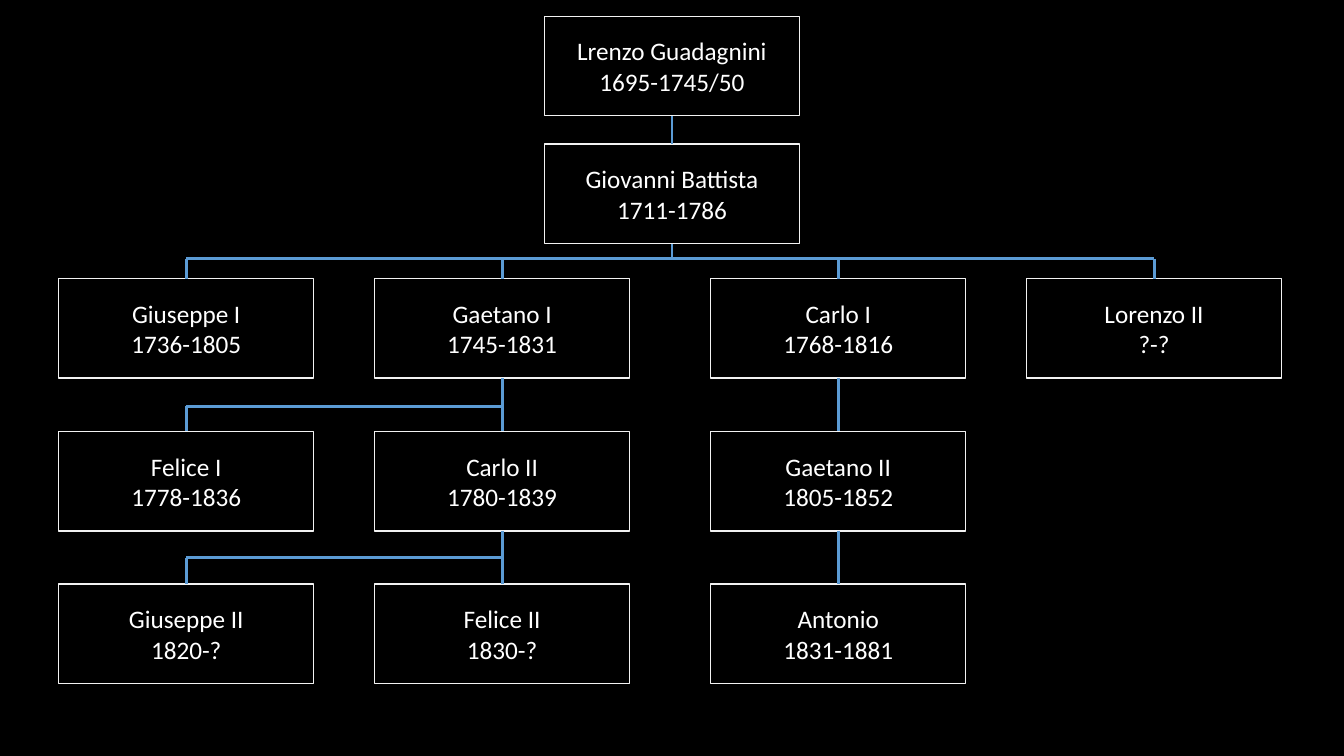
from dataclasses import dataclass

from lxml.etree import SubElement
from pptx import Presentation
from pptx.dml.color import RGBColor
from pptx.enum.shapes import MSO_CONNECTOR as Conn, MSO_SHAPE as Shape
from pptx.enum.text import MSO_ANCHOR as Anchor, PP_ALIGN as Align
from pptx.oxml.ns import qn
from pptx.util import Cm, Pt


@dataclass(frozen=True)
class Theme:
    back: RGBColor = RGBColor.from_string("000000")
    text: RGBColor = RGBColor.from_string("FFFFFF")
    border: RGBColor = RGBColor.from_string("F2F2F2")
    link: RGBColor = RGBColor.from_string("5B9BD5")
    font: str = "Calibri"
    size: Pt = Pt(18)
    border_width: Pt = Pt(1)
    link_width: Pt = Pt(2)


T = Theme()
TOP, BOTTOM = 0, 2
BOX_W, BOX_H = 6.43, 2.51
COLUMNS = {"A": 1.48, "B": 9.44, "C": 17.91, "D": 25.87, "mid": 13.72}
ROWS = [0.41, 3.63, 7.02, 10.87, 14.72]
CENTER = {column: left + BOX_W / 2 for column, left in COLUMNS.items()}

# column, generation, name, years
PEOPLE = [
    ("mid", 0, "Lrenzo Guadagnini", "1695-1745/50"),
    ("mid", 1, "Giovanni Battista", "1711-1786"),
    ("A", 2, "Giuseppe I", "1736-1805"),
    ("B", 2, "Gaetano I", "1745-1831"),
    ("C", 2, "Carlo I", "1768-1816"),
    ("D", 2, "Lorenzo II", "?-?"),
    ("A", 3, "Felice I", "1778-1836"),
    ("B", 3, "Carlo II", "1780-1839"),
    ("C", 3, "Gaetano II", "1805-1852"),
    ("A", 4, "Giuseppe II", "1820-?"),
    ("B", 4, "Felice II", "1830-?"),
    ("C", 4, "Antonio", "1831-1881"),
]
# parent and child boxes joined by one straight line
DIRECT = [(("mid", 0), ("mid", 1))]
DIRECT += [((c, g), (c, g + 1)) for c in "BC" for g in (2, 3)]
# height of the bar, its last column, its parent if not joined directly, children
BRANCHES = [
    (6.52, "D", ("mid", 1), [(c, 2) for c in "ABCD"]),
    (10.24, "B", None, [("A", 3)]),
    (14.05, "B", None, [("A", 4)]),
]

prs = Presentation()
prs.slide_width, prs.slide_height = Cm(33.87), Cm(19.05)
s = prs.slides.add_slide(prs.slide_layouts[6])
s.background.fill.solid()
s.background.fill.fore_color.rgb = T.back


def write(tf, lines, size=T.size, color=T.text, align=Align.CENTER):
    tf.word_wrap = True
    tf.vertical_anchor = Anchor.MIDDLE
    for i, text in enumerate(lines):
        p = tf.add_paragraph() if i else tf.paragraphs[0]
        p.alignment = align
        r = p.add_run()
        r.text = text
        r.font.name, r.font.size = T.font, size
        r.font.color.rgb = color


def link(x1, y1, x2, y2, parent=None, child=None):
    """Draw a line, joined to the parent's bottom and the child's top if given."""
    cx = s.shapes.add_connector(Conn.STRAIGHT, Cm(x1), Cm(y1), Cm(x2), Cm(y2))
    cx.line.color.rgb = T.link
    cx.line.width = T.link_width
    SubElement(cx._element.spPr, qn("a:effectLst"))
    if parent:
        cx.begin_connect(boxes[parent], BOTTOM)
    if child:
        cx.end_connect(boxes[child], TOP)


boxes = {}
for column, generation, name, years in PEOPLE:
    box = s.shapes.add_shape(Shape.RECTANGLE, Cm(COLUMNS[column]),
                             Cm(ROWS[generation]), Cm(BOX_W), Cm(BOX_H))
    box.shadow.inherit = False
    box.fill.background()
    box.line.color.rgb = T.border
    box.line.width = T.border_width
    write(box.text_frame, [name, years])
    boxes[column, generation] = box

for parent, child in DIRECT:
    link(CENTER[parent[0]], ROWS[parent[1]] + BOX_H,
         CENTER[child[0]], ROWS[child[1]], parent, child)

for y, last, parent, children in BRANCHES:
    link(CENTER["A"], y, CENTER[last], y)
    if parent:
        x = CENTER[parent[0]]
        link(x, ROWS[parent[1]] + BOX_H, x, y, parent=parent)
    for child in children:
        x = CENTER[child[0]]
        link(x, y, x, ROWS[child[1]], child=child)

prs.save("out.pptx")
